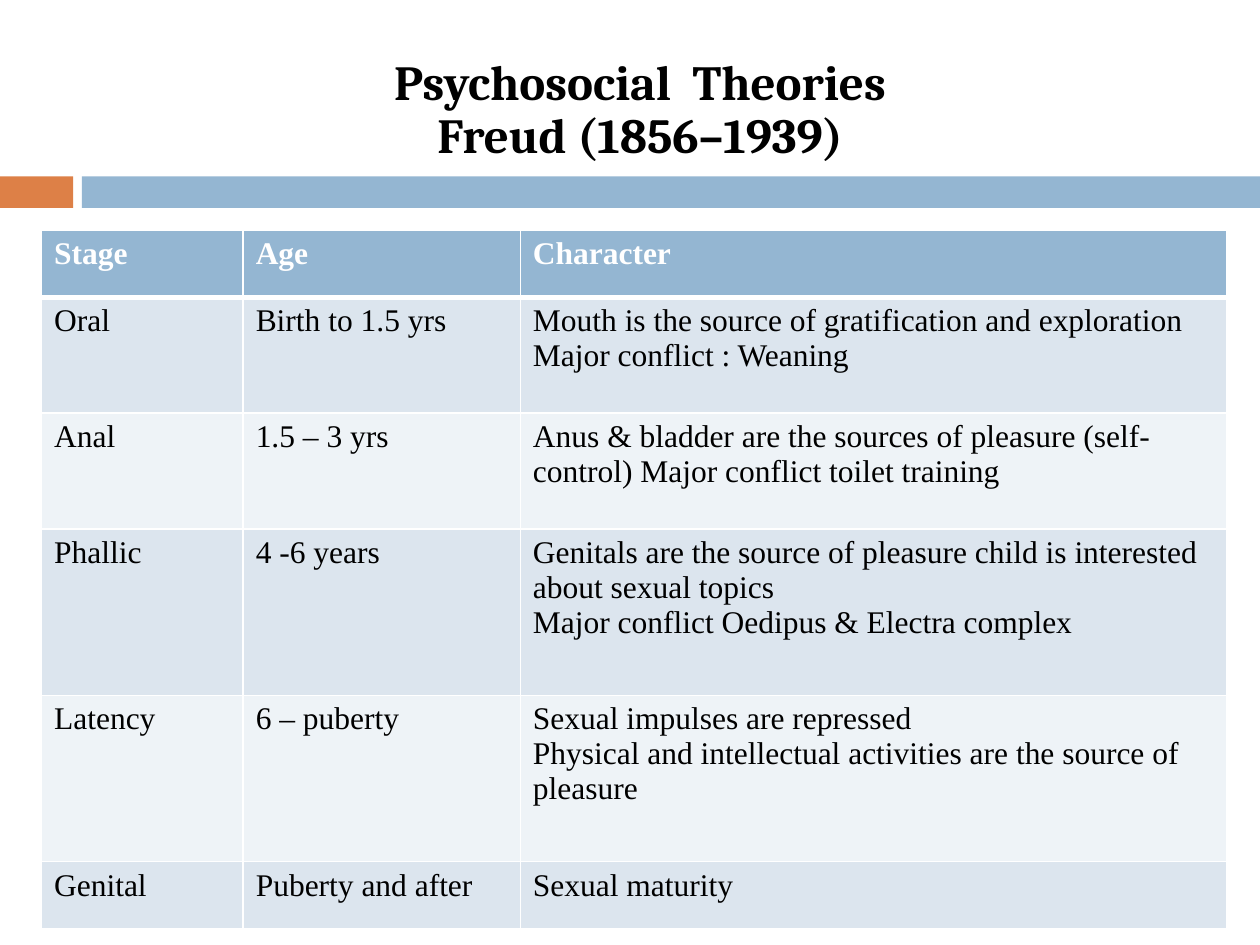
from dataclasses import dataclass

from lxml import etree
from pptx import Presentation
from pptx import util as u
from pptx.dml import color
from pptx.enum import shapes, text
from pptx.oxml import ns

WHITE, BLACK = "FFFFFF", "000000"
BLUE, ORANGE = "94B6D2", "DD8047"
BANDS = ("DCE5EE", "EEF3F7")
TITLE_FONT = {"name": "Cambria", "size": u.Pt(28), "bold": True}
HEADER_FONT = {"name": "Times New Roman", "size": u.Pt(18), "bold": True}
BODY_FONT = {**HEADER_FONT, "bold": False}


@dataclass(frozen=True)
class Bar:
    left: float
    width: float
    fill: str


@dataclass(frozen=True)
class Stage:
    name: str
    age: str
    character: str
    height: float


BARS = (Bar(0, 0.58, ORANGE), Bar(0.65, 9.35, BLUE))
COLUMN_WIDTHS = (1.6, 2.2, 5.61)
STAGES = (
    Stage("Stage", "Age", "Character", 0.53),
    Stage("Oral", "Birth to 1.5 yrs",
          "Mouth is the source of gratification and exploration\n"
          "Major conflict : Weaning", 0.92),
    Stage("Anal", "1.5 – 3 yrs",
          "Anus & bladder are the sources of pleasure (self-control) "
          "Major conflict toilet training", 0.92),
    Stage("Phallic", "4 -6 years",
          "Genitals are the source of pleasure child is interested about sexual topics\n"
          "Major conflict Oedipus & Electra complex", 1.32),
    Stage("Latency", "6 – puberty",
          "Sexual impulses are repressed\n"
          "Physical and intellectual activities are the source of pleasure", 1.32),
    Stage("Genital", "Puberty and after", "Sexual maturity", 0.53),
)


def rgb(value: str) -> color.RGBColor:
    return color.RGBColor.from_string(value)


def write(frame, wording: str, font: dict, ink: str, align, spacing: float = 1.0) -> None:
    frame.text = wording
    for paragraph in frame.paragraphs:
        paragraph.alignment = align
        paragraph.line_spacing = spacing
        for run in paragraph.runs:
            for key, value in font.items():
                setattr(run.font, key, value)
            run.font.color.rgb = rgb(ink)


def draw_bar(slide, bar: Bar) -> None:
    band = slide.shapes.add_shape(
        shapes.MSO_SHAPE.RECTANGLE,
        u.Inches(bar.left), u.Inches(1.4), u.Inches(bar.width), u.Inches(0.25))
    band.shadow.inherit = False
    band.fill.solid()
    band.fill.fore_color.rgb = rgb(bar.fill)
    band.line.fill.background()


def draw_title(slide) -> None:
    heading = slide.shapes.add_textbox(
        u.Inches(0.33), u.Inches(0.34), u.Inches(9.5), u.Inches(1.08))
    frame = heading.text_frame
    layout = {"word_wrap": True, "vertical_anchor": text.MSO_ANCHOR.MIDDLE,
              "margin_top": 0, "margin_bottom": 0}
    for key, value in layout.items():
        setattr(frame, key, value)
    write(frame, "Psychosocial  Theories\nFreud (1856–1939)",
          TITLE_FONT, BLACK, text.PP_ALIGN.CENTER, 0.9)


def set_borders(cell, widths: dict) -> None:
    properties = cell._tc.get_or_add_tcPr()
    for position, (side, width) in enumerate(widths.items()):
        line = etree.Element(ns.qn(f"a:{side}"), w=str(u.Pt(width)))
        fill = etree.SubElement(line, ns.qn("a:solidFill"))
        etree.SubElement(fill, ns.qn("a:srgbClr"), val=WHITE)
        properties.insert(position, line)


def draw_stages(slide) -> None:
    table = slide.shapes.add_table(
        len(STAGES), len(COLUMN_WIDTHS), u.Inches(0.33), u.Inches(1.83),
        u.Inches(sum(COLUMN_WIDTHS)),
        u.Inches(sum(stage.height for stage in STAGES))).table
    for column, width in zip(table.columns, COLUMN_WIDTHS):
        column.width = u.Inches(width)
    for index, stage in enumerate(STAGES):
        table.rows[index].height = u.Inches(stage.height)
        header = index == 0
        fill = BLUE if header else BANDS[(index - 1) % 2]
        font, ink = (HEADER_FONT, WHITE) if header else (BODY_FONT, BLACK)
        borders = {"lnL": 1, "lnR": 1, "lnT": 3 if index == 1 else 1,
                   "lnB": 3 if header else 1}
        for cell, wording in zip(table.rows[index].cells,
                                 (stage.name, stage.age, stage.character)):
            write(cell.text_frame, wording, font, ink, text.PP_ALIGN.LEFT)
            cell.fill.solid()
            cell.fill.fore_color.rgb = rgb(fill)
            set_borders(cell, borders)


def main() -> None:
    """Build the slide on Freud's psychosocial stages."""
    deck = Presentation()
    deck.slide_width, deck.slide_height = u.Inches(10), u.Inches(7.5)
    slide = deck.slides.add_slide(deck.slide_layouts[6])
    for bar in BARS:
        draw_bar(slide, bar)
    draw_title(slide)
    draw_stages(slide)
    deck.save("out.pptx")


if __name__ == "__main__":
    main()
